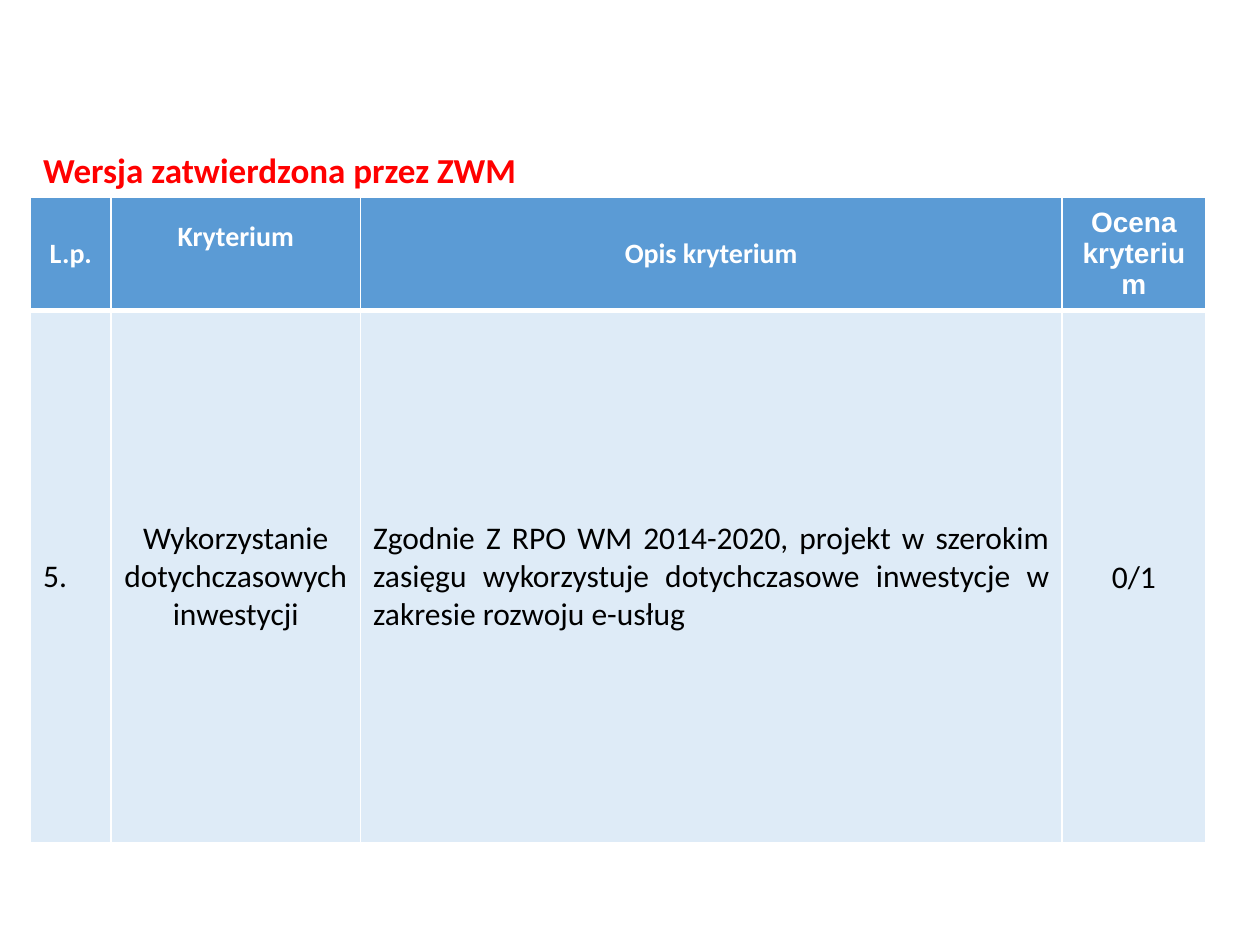
from lxml.etree import SubElement
from pptx import Presentation
from pptx.dml.color import RGBColor
from pptx.enum.text import MSO_ANCHOR, PP_ALIGN
from pptx.oxml.ns import qn
from pptx.util import Pt

WHITE, BLACK, RED = "FFFFFF", "000000", "FF0000"
HEAD_FILL, BODY_FILL = "5B9BD5", "DEEBF7"
LEFT, CENTER, JUSTIFY = PP_ALIGN.LEFT, PP_ALIGN.CENTER, PP_ALIGN.JUSTIFY

COL_WIDTHS = (46, 142.5, 401, 82)
ROW_HEIGHTS = (64, 304.5)
HEADERS = ("L.p.", "Kryterium", "Opis kryterium", "Ocena kryterium")
CRITERION = (
    "5.",
    "Wykorzystanie dotychczasowych inwestycji",
    "Zgodnie Z RPO WM 2014-2020, projekt w szerokim zasięgu wykorzystuje "
    "dotychczasowe inwestycje w zakresie rozwoju e-usług",
    "0/1",
)
BODY_ALIGNS = (LEFT, CENTER, JUSTIFY, CENTER)


def rgb(color):
    return RGBColor.from_string(color)


def write(tf, text, size, color, bold=False, align=LEFT, font="Calibri"):
    tf.text = text
    p = tf.paragraphs[0]
    p.alignment = align
    f = p.runs[0].font
    f.name, f.size, f.bold = font, Pt(size), bold
    f.color.rgb = rgb(color)


def set_borders(cell, **widths):
    """Draw white borders; widths maps L, R, T and B to points."""
    tc_pr = cell._tc.get_or_add_tcPr()
    for side, width in widths.items():
        ln = SubElement(tc_pr, qn(f"a:ln{side}"), w=str(Pt(width)))
        fill = SubElement(ln, qn("a:solidFill"))
        SubElement(fill, qn("a:srgbClr"), val=WHITE)


def style_cell(cell, fill, top, bottom):
    set_borders(cell, L=1, R=1, T=top, B=bottom)
    cell.fill.solid()
    cell.fill.fore_color.rgb = rgb(fill)
    cell.vertical_anchor = MSO_ANCHOR.MIDDLE


def add_heading(slide, left, top, width, height):
    box = slide.shapes.add_textbox(Pt(left), Pt(top), Pt(width), Pt(height))
    tf = box.text_frame
    tf.word_wrap = True
    tf.vertical_anchor = MSO_ANCHOR.MIDDLE
    write(tf, "Wersja zatwierdzona przez ZWM", 20, RED, bold=True)


def add_criteria_table(slide, left, top):
    table = slide.shapes.add_table(
        len(ROW_HEIGHTS), len(COL_WIDTHS), Pt(left), Pt(top),
        Pt(sum(COL_WIDTHS)), Pt(sum(ROW_HEIGHTS))).table
    for col, width in zip(table.columns, COL_WIDTHS):
        col.width = Pt(width)
    for row, height in zip(table.rows, ROW_HEIGHTS):
        row.height = Pt(height)

    fonts = ("Calibri", "Calibri", "Calibri", "Arial")
    for i, (text, font) in enumerate(zip(HEADERS, fonts)):
        cell = table.cell(0, i)
        style_cell(cell, HEAD_FILL, top=1, bottom=3)
        write(cell.text_frame, text, 16, WHITE, True, CENTER, font)
    table.cell(0, 1).margin_bottom = Pt(23)

    for i, (text, align) in enumerate(zip(CRITERION, BODY_ALIGNS)):
        cell = table.cell(1, i)
        style_cell(cell, BODY_FILL, top=3, bottom=1)
        write(cell.text_frame, text, 18, BLACK, align=align)
    score = table.cell(1, 3)
    score.margin_left = score.margin_right = Pt(3)
    score.margin_top = score.margin_bottom = Pt(3)
    score.text_frame.paragraphs[0].line_spacing = 1.07


def main():
    prs = Presentation()
    prs.slide_width, prs.slide_height = Pt(720), Pt(540)
    slide = prs.slides.add_slide(prs.slide_layouts[6])
    add_heading(slide, 17.5, 81, 300, 31.5)
    add_criteria_table(slide, 17.5, 112.5)
    prs.save("out.pptx")


if __name__ == "__main__":
    main()
